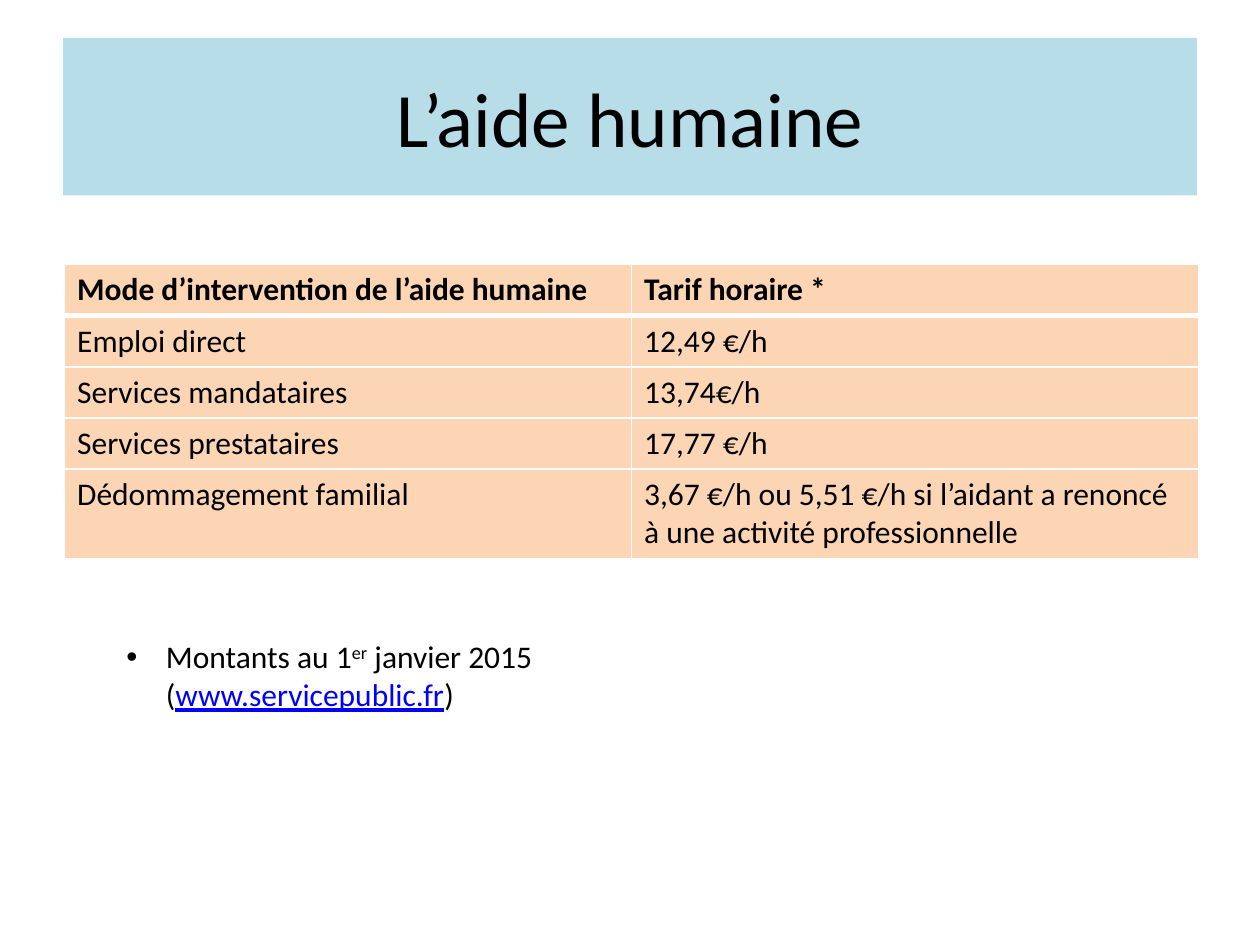
"""Build the slide on hourly rates for human assistance."""
from lxml import etree
from pptx import Presentation
from pptx.dml.color import RGBColor
from pptx.enum.text import MSO_ANCHOR, MSO_AUTO_SIZE, PP_ALIGN
from pptx.oxml.ns import qn
from pptx.util import Pt

MIDDLE = MSO_ANCHOR.MIDDLE
GROW = MSO_AUTO_SIZE.SHAPE_TO_FIT_TEXT
CENTER = PP_ALIGN.CENTER

FACE = "Calibri"
COLORS = {"band": "B7DEE8", "cell": "FCD5B5", "rule": "FFFFFF",
          "text": "000000", "link": "0000FF"}
TITLE = "L’aide humaine"
ROWS = [
    ("Mode d’intervention de l’aide humaine", "Tarif horaire *"),
    ("Emploi direct", "12,49 €/h"),
    ("Services mandataires", "13,74€/h"),
    ("Services prestataires", "17,77 €/h"),
    ("Dédommagement familial",
     "3,67 €/h ou 5,51 €/h si l’aidant a renoncé à une activité professionnelle"),
]
NOTE = [("Montants au 1", None), ("er", "raised"), (" janvier 2015 (", None),
        ("www.servicepublic.fr", "link"), (")", None)]
HEIGHTS = [29.2] * 4 + [50.4]
INDENT = 22.5


def color(name):
    return RGBColor.from_string(COLORS[name])


def paint(fill, name):
    fill.solid()
    fill.fore_color.rgb = color(name)


def style(par, size, bold=False):
    font = par.font
    font.name, font.size, font.bold = FACE, Pt(size), bold
    font.color.rgb = color("text")


def edge(cell, widths):
    props = cell._tc.get_or_add_tcPr()
    for side, width in widths.items():
        line = etree.SubElement(props, qn(f"a:ln{side}"), w=str(Pt(width)))
        fill = etree.SubElement(line, qn("a:solidFill"))
        etree.SubElement(fill, qn("a:srgbClr"), val=COLORS["rule"])


def add_title(slide):
    title = slide.shapes.title
    title.left, title.top, title.width, title.height = Pt(36), Pt(21.6), Pt(648), Pt(90)
    paint(title.fill, "band")
    frame = title.text_frame
    frame.text, frame.vertical_anchor = TITLE, MIDDLE
    par = frame.paragraphs[0]
    par.alignment = CENTER
    style(par, 44)


def add_rates(slide):
    table = slide.shapes.add_table(len(ROWS), 2, Pt(36.9), Pt(151.2),
                                   Pt(648), Pt(sum(HEIGHTS))).table
    table.horz_banding = False
    for i, (row, height) in enumerate(zip(ROWS, HEIGHTS)):
        table.rows[i].height = Pt(height)
        for j, text in enumerate(row):
            cell = table.cell(i, j)
            cell.text = text
            style(cell.text_frame.paragraphs[0], 18, bold=i == 0)
            edge(cell, {"L": 1, "R": 1, "T": 3 if i == 1 else 1, "B": 3 if i == 0 else 1})
            paint(cell.fill, "cell")


def add_note(slide):
    frame = slide.shapes.add_textbox(Pt(65.2), Pt(360.7), Pt(294.5), Pt(51)).text_frame
    frame.word_wrap, frame.auto_size = True, GROW
    par = frame.paragraphs[0]
    style(par, 18)
    props = par._p.get_or_add_pPr()
    props.set("marL", str(Pt(INDENT)))
    props.set("indent", str(Pt(-INDENT)))
    bullet = etree.Element(qn("a:buChar"), char="•")
    face = etree.Element(qn("a:buFont"), typeface="Arial")
    props.insert(0, bullet)
    props.insert(0, face)
    for text, kind in NOTE:
        run = par.add_run()
        run.text = text
        if kind == "raised":
            run._r.get_or_add_rPr().set("baseline", "30000")
        elif kind == "link":
            run.font.underline = True
            run.font.color.rgb = color("link")


def main():
    deck = Presentation()
    deck.slide_width, deck.slide_height = Pt(720), Pt(540)
    slide = deck.slides.add_slide(deck.slide_layouts[5])
    add_title(slide)
    add_rates(slide)
    add_note(slide)
    deck.save("out.pptx")


if __name__ == "__main__":
    main()
